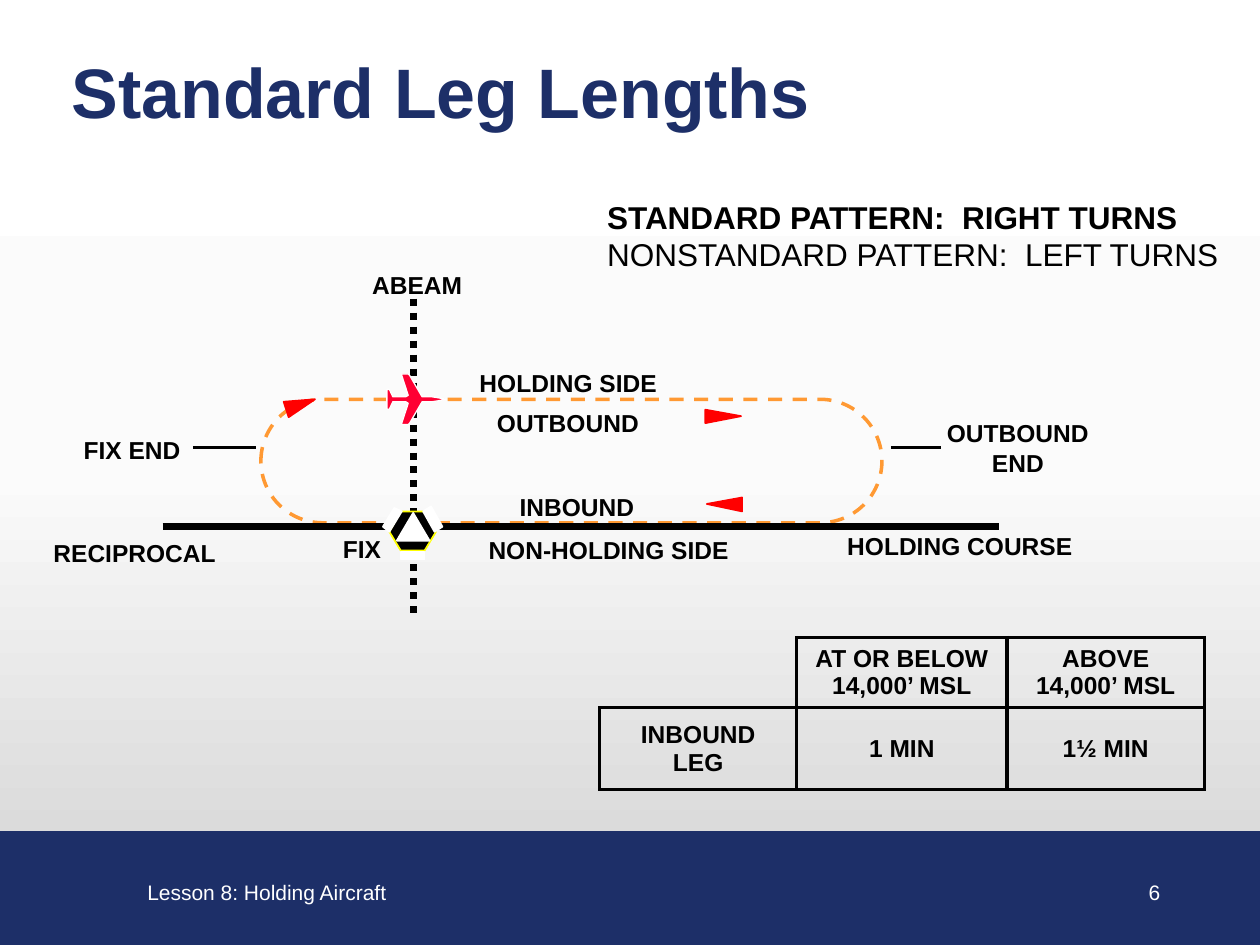
from copy import deepcopy
from dataclasses import dataclass

from lxml import etree
from pptx import Presentation
from pptx import util as u
from pptx.dml.color import RGBColor
from pptx.enum import dml, shapes, text
from pptx.oxml import ns


@dataclass(frozen=True)
class Theme:
    font: str = "Arial"
    navy: str = "1D2F68"
    white: str = "FFFFFF"
    black: str = "000000"
    orange: str = "FF9933"
    red: str = "FF0000"
    plane: str = "FF0033"
    yellow: str = "FFFF00"
    backdrop: tuple = ((0, "FFFFFF"), (0.5, "FBFBFB"), (1, "D0D0D0"))
    title: int = 40
    pattern: int = 18
    label: int = 14
    footer: int = 12


theme = Theme()


def write_text(frame, content, size=theme.label, color=theme.black, bold=True,
               align=text.PP_ALIGN.LEFT, anchor=text.MSO_ANCHOR.TOP, wrap=False):
    """Fill the frame with one paragraph for each line of content."""
    frame.text = content
    frame.word_wrap = wrap
    frame.vertical_anchor = anchor
    for paragraph in frame.paragraphs:
        paragraph.alignment = align
        paragraph.font.name = theme.font
        paragraph.font.size = u.Pt(size)
        paragraph.font.bold = bold
        paragraph.font.color.rgb = RGBColor.from_string(color)


def draw_outline(parent, points, fill, line, width=1):
    """Draw a closed outline through points given in centimetres."""
    corners = [(u.Cm(x), u.Cm(y)) for x, y in points]
    builder = parent.build_freeform(*corners[0])
    builder.add_line_segments(corners[1:], close=True)
    shape = builder.convert_to_shape()
    shape.shadow.inherit = False
    shape.fill.solid()
    shape.fill.fore_color.rgb = RGBColor.from_string(fill)
    shape.line.color.rgb = RGBColor.from_string(line)
    shape.line.width = u.Pt(width)


presentation = Presentation()
presentation.slide_width = u.Cm(25.4)
presentation.slide_height = u.Cm(19.05)
slide = presentation.slides.add_slide(presentation.slide_layouts[5])

# Background
background = slide.background.fill
background.gradient()
background.gradient_angle = 270
stop_list = slide.element.find(".//" + ns.qn("a:gsLst"))
stop_list.append(deepcopy(stop_list[0]))
for stop, (position, color) in zip(background.gradient_stops, theme.backdrop):
    stop.position = position
    stop.color.rgb = RGBColor.from_string(color)

# Title and footer band
title = slide.shapes.title
title.left, title.top, title.width, title.height = map(u.Cm, (1.19, 0.97, 23.55, 1.7))
write_text(title.text_frame, "Standard Leg Lengths", size=theme.title, color=theme.navy,
           anchor=text.MSO_ANCHOR.MIDDLE, wrap=True)

band = slide.shapes.add_shape(shapes.MSO_SHAPE.RECTANGLE, 0, u.Cm(16.76), u.Cm(25.4), u.Cm(2.29))
band.shadow.inherit = False
band.fill.solid()
band.fill.fore_color.rgb = RGBColor.from_string(theme.navy)
band.line.color.rgb = RGBColor.from_string(theme.navy)

for content, left, width, align in (
    ("Lesson 8: Holding Aircraft", 2.72, 5.36, text.PP_ALIGN.LEFT),
    ("6", 22.07, 1.57, text.PP_ALIGN.RIGHT),
):
    box = slide.shapes.add_textbox(u.Cm(left), u.Cm(17.6), u.Cm(width), u.Cm(0.76))
    write_text(box.text_frame, content, size=theme.footer, color=theme.white, bold=False,
               align=align, wrap=True)

# Holding pattern
racetrack = slide.shapes.add_shape(shapes.MSO_SHAPE.ROUNDED_RECTANGLE,
                                   u.Cm(5.26), u.Cm(8.05), u.Cm(12.52), u.Cm(2.49))
racetrack.adjustments[0] = 0.5
racetrack.shadow.inherit = False
racetrack.fill.background()
racetrack.line.color.rgb = RGBColor.from_string(theme.orange)
racetrack.line.width = u.Pt(2)
racetrack.line.dash_style = dml.MSO_LINE.DASH

for x1, y1, x2, y2, width, dash in (
    (17.96, 9.02, 18.97, 9.02, 2, None),
    (3.89, 9.02, 5.16, 9.02, 2, None),
    (3.28, 10.62, 20.14, 10.62, 4, None),
    (8.33, 6.02, 8.33, 12.42, 4, dml.MSO_LINE.ROUND_DOT),
):
    connector = slide.shapes.add_connector(shapes.MSO_CONNECTOR.STRAIGHT,
                                           u.Cm(x1), u.Cm(y1), u.Cm(x2), u.Cm(y2))
    connector.line.color.rgb = RGBColor.from_string(theme.black)
    connector.line.width = u.Pt(width)
    connector.line.dash_style = dash
    etree.SubElement(connector.element.find(ns.qn("p:spPr")), ns.qn("a:effectLst"))

for content, left, top, width in (
    ("FIX", 6.65, 10.64, 1.3),
    ("NON-HOLDING SIDE", 9.58, 10.67, 5.38),
    ("INBOUND", 10.21, 9.8, 2.84),
    ("OUTBOUND\nEND", 18.82, 8.31, 3.4),
    ("HOLDING COURSE", 16.81, 10.59, 5.08),
    ("RECIPROCAL", 0.81, 10.72, 3.81),
    ("FIX END", 1.42, 8.64, 2.49),
    ("ABEAM", 7.24, 5.31, 2.34),
    ("HOLDING SIDE", 9.4, 7.29, 4.11),
    ("OUTBOUND", 9.75, 8.1, 3.4),
):
    height = 1.45 if "\n" in content else 0.86
    box = slide.shapes.add_textbox(u.Cm(left), u.Cm(top), u.Cm(width), u.Cm(height))
    write_text(box.text_frame, content, align=text.PP_ALIGN.CENTER)

patterns = slide.shapes.add_textbox(u.Cm(11.99), u.Cm(3.86), u.Cm(13), u.Cm(1.78))
write_text(patterns.text_frame,
           "STANDARD PATTERN:  RIGHT TURNS\nNONSTANDARD PATTERN:  LEFT TURNS",
           size=theme.pattern)
patterns.text_frame.paragraphs[1].font.bold = False

for arrow in (
    [(14.22, 8.53), (14.22, 8.26), (14.94, 8.39)],
    [(14.96, 10.31), (14.96, 10.03), (14.25, 10.16)],
    [(5.82, 8.41), (5.72, 8.1), (6.35, 8.05)],
):
    draw_outline(slide.shapes, arrow, theme.red, theme.red)

# Aircraft: one half from nose to tail, mirrored about its axis
axis = 8.05
half = [(8.99, 0), (8.84, 0.03), (8.71, 0.05), (8.51, 0.05), (8.26, 0.48), (8.23, 0.51),
        (8.1, 0.51), (8.1, 0.48), (8.23, 0.08), (8.18, 0.05), (7.92, 0.05), (7.85, 0.2),
        (7.8, 0.2)]
aircraft = [(x, axis - y) for x, y in half] + [(x, axis + y) for x, y in reversed(half)]
draw_outline(slide.shapes, aircraft, theme.plane, theme.white, width=0.75)

# Fix symbol
fix = slide.shapes.add_group_shape()
hexagon = [(8.08, 10.31), (8.56, 10.31), (8.79, 10.72), (8.56, 11.1), (8.08, 11.1), (7.85, 10.72)]
draw_outline(fix.shapes, hexagon, theme.black, theme.yellow)
for patch in (
    [(8, 10.9), (8.33, 10.34), (8.66, 10.9)],
    [(8.08, 11.28), (8.08, 11.13), (8.56, 11.13), (8.56, 11.28)],
    [(8.53, 10.31), (8.69, 10.21), (8.92, 10.62), (8.76, 10.72)],
    [(7.85, 10.72), (7.72, 10.62), (7.95, 10.24), (8.1, 10.31)],
):
    draw_outline(fix.shapes, patch, theme.white, theme.white)

# Leg length table
rows = (("", "AT OR BELOW\n14,000’ MSL", "ABOVE\n14,000’ MSL"),
        ("INBOUND LEG", "1 MIN", "1½ MIN"))
table = slide.shapes.add_table(2, 3, u.Cm(12.09), u.Cm(12.85), u.Cm(12.19), u.Cm(3.07)).table
table.first_row = table.horz_banding = False
for column, width in zip(table.columns, (3.97, 4.24, 3.98)):
    column.width = u.Cm(width)
for row, height in zip(table.rows, (1.42, 1.65)):
    row.height = u.Cm(height)
for row_index, row in enumerate(rows):
    for column_index, content in enumerate(row):
        cell = table.cell(row_index, column_index)
        write_text(cell.text_frame, content, align=text.PP_ALIGN.CENTER, wrap=True)
        cell.vertical_anchor = text.MSO_ANCHOR.MIDDLE
        cell.margin_top = cell.margin_bottom = u.Cm(0.05)
        cell.fill.background()
        properties = cell._tc.get_or_add_tcPr()
        for index, side in enumerate(("lnL", "lnR", "lnT", "lnB")):
            border = etree.Element(ns.qn("a:" + side), w=str(u.Pt(2)))
            if not content and side in ("lnL", "lnT"):
                etree.SubElement(border, ns.qn("a:noFill"))
            else:
                solid = etree.SubElement(border, ns.qn("a:solidFill"))
                etree.SubElement(solid, ns.qn("a:srgbClr"), val=theme.black)
            properties.insert(index, border)

presentation.save("out.pptx")
